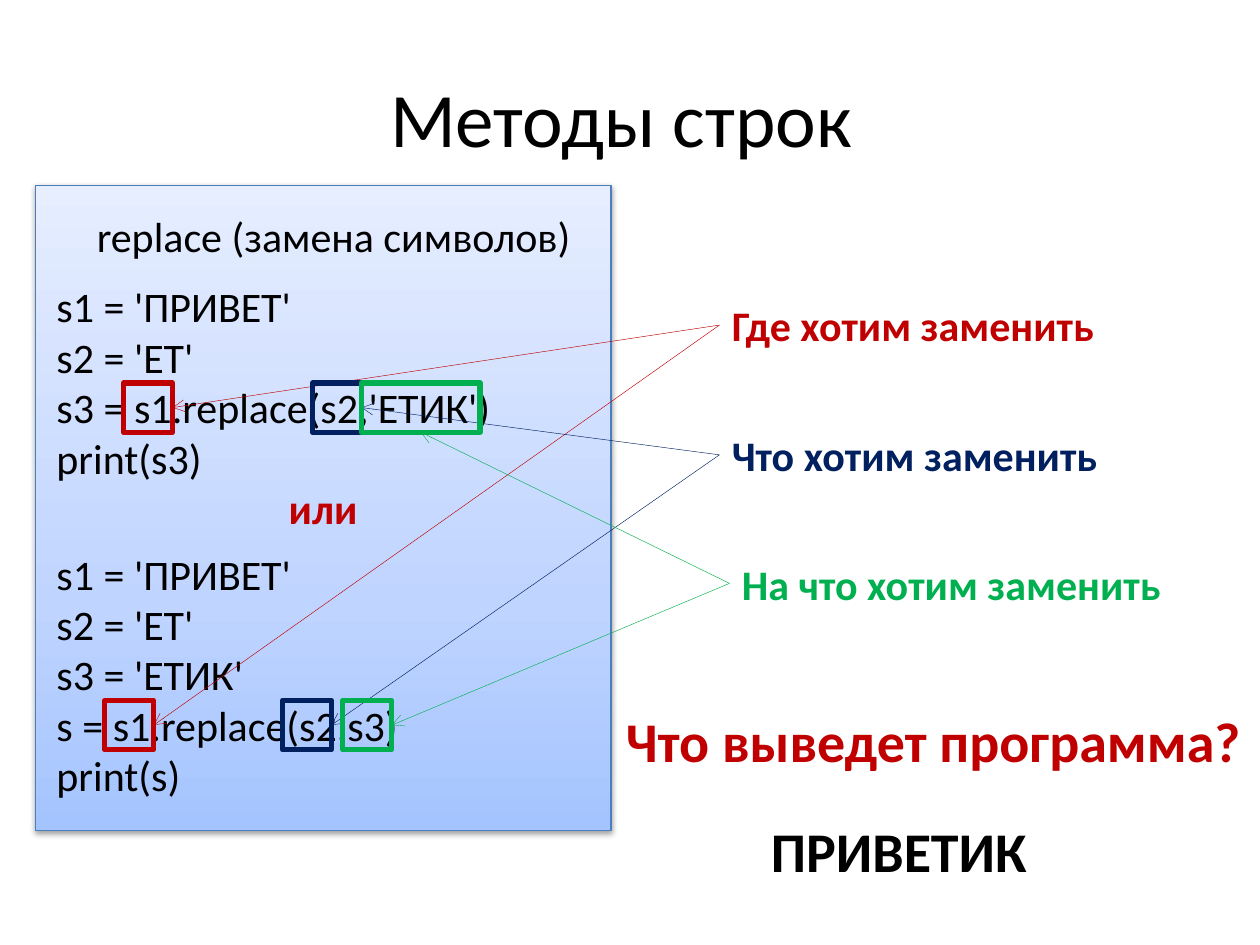
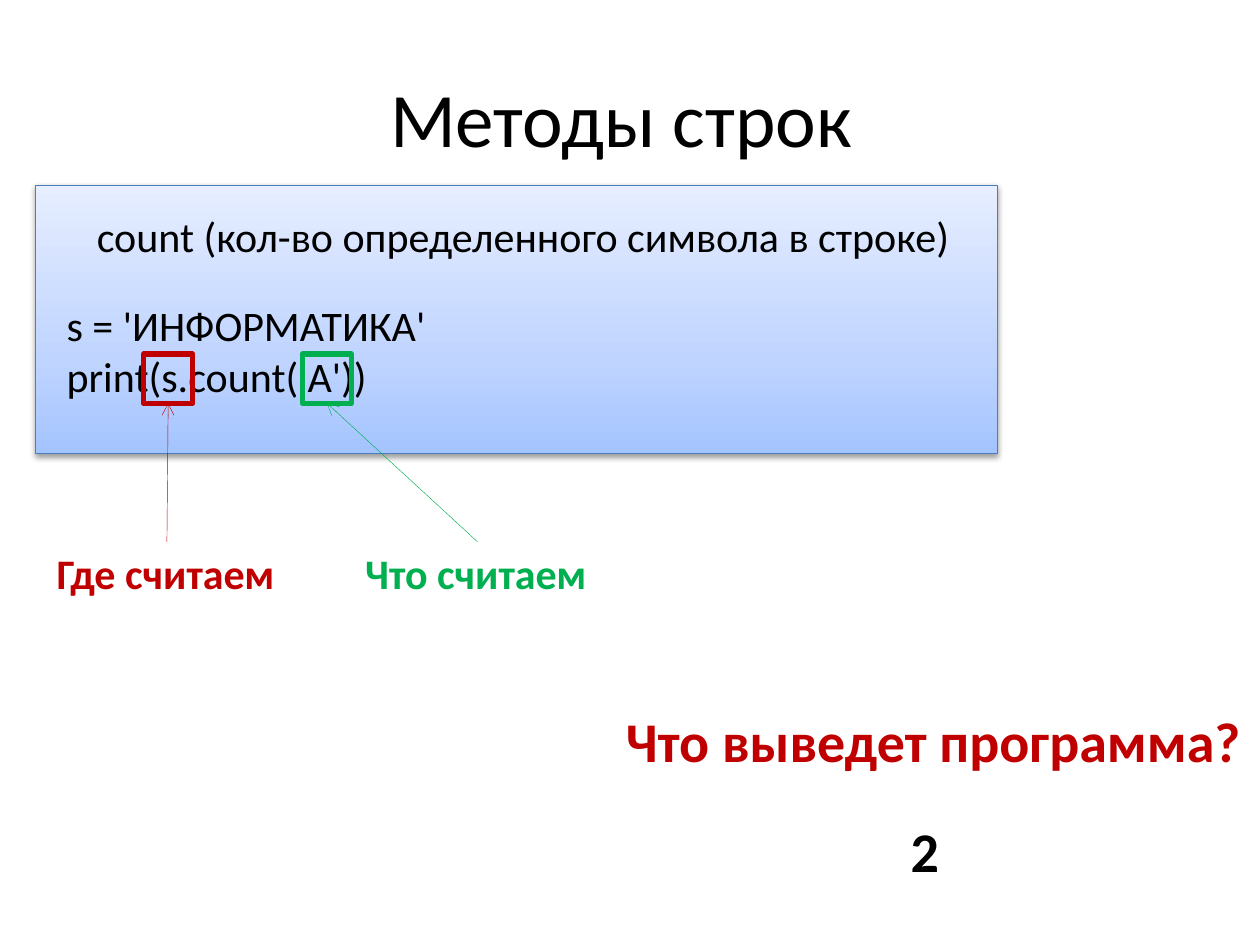
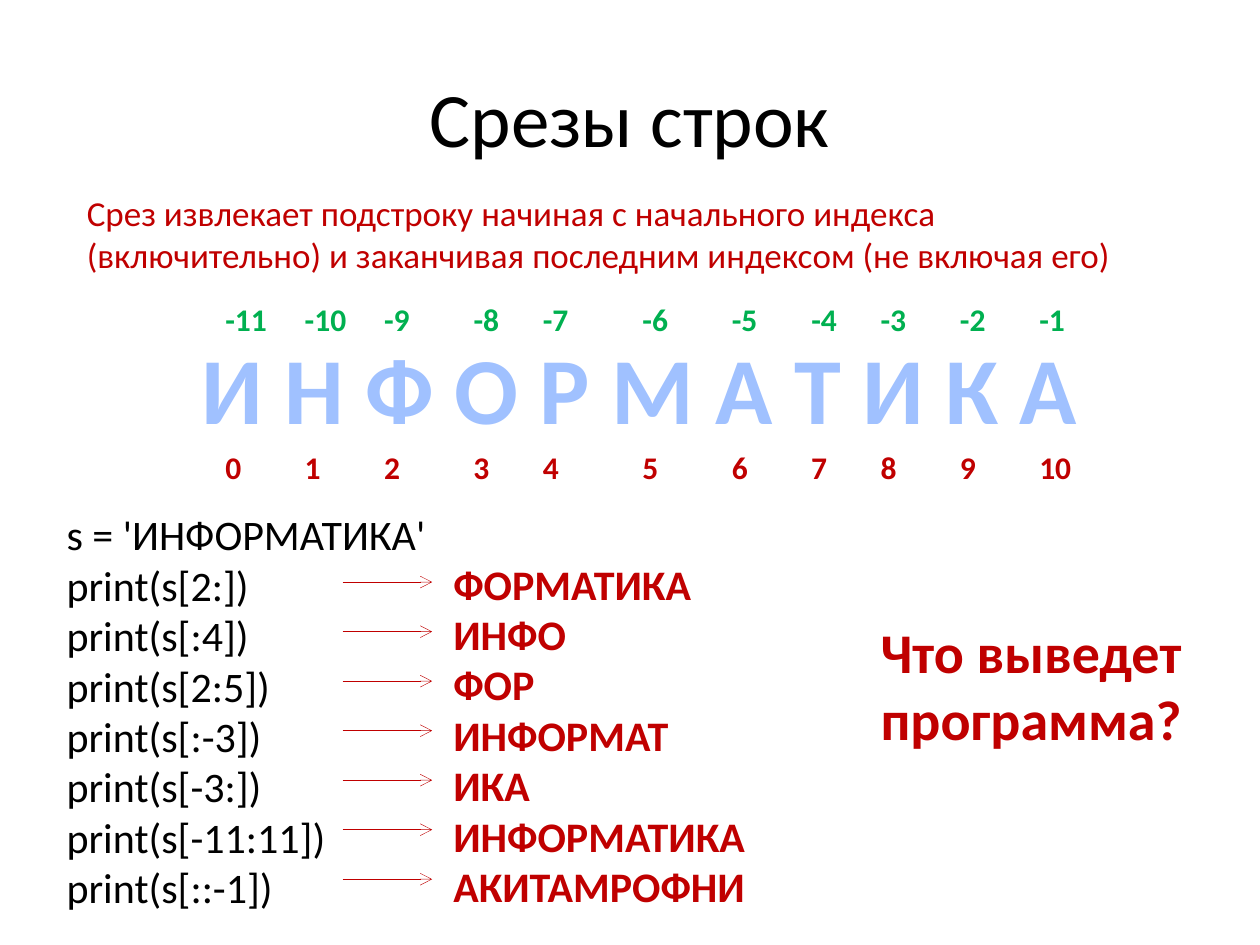
import copy

import pptx
import pptx.dml.color
import pptx.enum.shapes
import pptx.enum.text
import pptx.oxml
import pptx.oxml.ns
import pptx.util

Inches = pptx.util.Inches

# Shared look
FONT = "Calibri"
BLACK, RED, NAVY, GREEN, PALE = "000000", "C00000", "002060", "00B050", "A0C1FF"
EDGE = "4B7EBC"
BLEND = [(0, "A4C4FF"), (0.35, "BFD4FF"), (1, "E6EEFF")]
TITLE_AT = (0.5, 0.3, 9, 1.25)
HEAD, CODE, ASK = 44, 24, 32
BOX = 0.39
TOP, LEFT, BOTTOM, RIGHT = range(4)  # connection sites of a rectangle
NS = 'xmlns:a="http://schemas.openxmlformats.org/drawingml/2006/main"'
SHADOW = (f'<a:effectLst {NS}><a:outerShdw blurRad="40000" dist="20000" dir="5400000" '
          'rotWithShape="0"><a:srgbClr val="000000"><a:alpha val="38000"/></a:srgbClr>'
          '</a:outerShdw></a:effectLst>')

# Slides on string methods; marks are (left, top, width, arrow site)
METHODS = [
    {
        "panel": (0.28, 1.47, 4.57, 5.12), "middle": "или",
        "head": ("replace (замена символов)", 4),
        "code": [
            ((0.35, 2.18, 5, 1.72),
             ["s1 = 'ПРИВЕТ'", "s2 = 'ЕТ'", "s3 = s1.replace(s2,'ЕТИК')", "print(s3)"]),
            ((0.35, 4.3, 5, 2.12),
             ["s1 = 'ПРИВЕТ'", "s2 = 'ЕТ'", "s3 = 'ЕТИК'", "s = s1.replace(s2,s3)",
              "print(s)"]),
        ],
        "from": LEFT,
        "calls": [
            ("Где хотим заменить", (5.71, 2.33, 3.1, 0.5), RED,
             [(0.83, 5.56, BOX, RIGHT), (0.98, 3.04, BOX, RIGHT)]),
            ("Что хотим заменить", (5.71, 3.36, 3.13, 0.5), NAVY,
             [(2.48, 3.04, BOX, RIGHT), (2.24, 5.56, BOX, RIGHT)]),
            ("На что хотим заменить", (5.79, 4.38, 3.56, 0.5), GREEN,
             [(2.72, 5.56, BOX, RIGHT), (2.87, 3.04, 0.94, BOTTOM)]),
        ],
        "answer": ("ПРИВЕТИК", (6.02, 6.43, 2.25, 0.64)),
    },
    {
        "panel": (0.28, 1.47, 7.64, 2.13), "middle": "",
        "head": ("count (кол-во определенного символа в строке)", 7.03),
        "code": [((0.43, 2.33, 5, 0.91), ["s = 'ИНФОРМАТИКА'", "print(s.count('А'))"])],
        "from": TOP,
        "calls": [
            ("Где считаем", (0.35, 4.3, 1.95, 0.5), RED, [(1.14, 2.81, BOX, BOTTOM)]),
            ("Что считаем", (2.8, 4.3, 1.98, 0.5), GREEN, [(2.4, 2.81, BOX, BOTTOM)]),
        ],
        "answer": ("2", (7.13, 6.43, 0.43, 0.64)),
    },
]

# Slide on slices
RULE = ("Срез извлекает подстроку начиная с начального индекса (включительно) "
        "и заканчивая последним индексом (не включая его)")
WORD = "ИНФОРМАТИКА"
COLS = [1.69, 2.32, 2.95, 3.66, 4.21, 5, 5.71, 6.34, 6.89, 7.52, 8.15]
SLICES = [
    ("2:", "ФОРМАТИКА"), (":4", "ИНФО"), ("2:5", "ФОР"), (":-3", "ИНФОРМАТ"),
    ("-3:", "ИКА"), ("-11:11", "ИНФОРМАТИКА"), ("::-1", "АКИТАМРОФНИ"),
]


def rgb(hue):
    return pptx.dml.color.RGBColor.from_string(hue)


def span(at):
    return [Inches(n) for n in at]


def write(frame, lines, size, hue=BLACK, bold=False, center=False):
    for i, line in enumerate(lines):
        para = frame.paragraphs[0] if i == 0 else frame.add_paragraph()
        if center:
            para.alignment = pptx.enum.text.PP_ALIGN.CENTER
        run = para.add_run()
        run.text = line
        font = run.font
        font.name, font.size, font.bold = FONT, pptx.util.Pt(size), bold
        font.color.rgb = rgb(hue)


def label(slide, at, lines, size=CODE, hue=BLACK, bold=False, wrap=False, center=False):
    box = slide.shapes.add_textbox(*span(at))
    box.text_frame.word_wrap = wrap
    box.text_frame.auto_size = pptx.enum.text.MSO_AUTO_SIZE.SHAPE_TO_FIT_TEXT
    write(box.text_frame, lines, size, hue, bold, center)
    return box


def rect(slide, at, hue, width):
    box = slide.shapes.add_shape(pptx.enum.shapes.MSO_SHAPE.RECTANGLE, *span(at))
    box.shadow.inherit = False
    box.fill.background()
    box.line.color.rgb = rgb(hue)
    box.line.width = pptx.util.Pt(width)
    return box


def panel(slide, at, middle):
    box = rect(slide, at, EDGE, 0.75)
    box.fill.gradient()
    box.fill.gradient_angle = 90
    props = box._element.spPr
    stops = props.find(".//" + pptx.oxml.ns.qn("a:gsLst"))
    stops.append(copy.deepcopy(stops[-1]))
    for stop, (place, hue) in zip(box.fill.gradient_stops, BLEND):
        stop.position = place
        stop.color.rgb = rgb(hue)
    plain = props.find(pptx.oxml.ns.qn("a:effectLst"))
    props.replace(plain, pptx.oxml.parse_xml(SHADOW))
    if middle:
        write(box.text_frame, [middle], CODE, RED, True, True)


def arrow(slide, hue, start=(0, 0), end=(0, 0)):
    line = slide.shapes.add_connector(
        pptx.enum.shapes.MSO_CONNECTOR.STRAIGHT, *span(start + end))
    line.line.color.rgb = rgb(hue)
    line.line.width = pptx.util.Pt(0.25)
    tip = pptx.oxml.parse_xml(f'<a:tailEnd {NS} type="arrow"/>')
    line.line._get_or_add_ln().append(tip)
    line._element.spPr.append(pptx.oxml.parse_xml(f"<a:effectLst {NS}/>"))
    return line


def start(deck, title):
    slide = deck.slides.add_slide(deck.slide_layouts[5])
    head = slide.shapes.title
    head.left, head.top, head.width, head.height = span(TITLE_AT)
    head.text_frame.vertical_anchor = pptx.enum.text.MSO_ANCHOR.MIDDLE
    write(head.text_frame, [title], HEAD, center=True)
    return slide


def method(deck, data):
    slide = start(deck, "Методы строк ")
    panel(slide, data["panel"], data["middle"])
    name, width = data["head"]
    label(slide, (0.67, 1.62, width, 0.5), [name])
    for at, lines in data["code"]:
        label(slide, at, lines, wrap=True)

    # Labels joined to the framed parts of the code
    for text, at, hue, marks in data["calls"]:
        note = label(slide, at, [text], hue=hue, bold=True)
        for left, top, wide, site in marks:
            mark = rect(slide, (left, top, wide, BOX), hue, 3)
            line = arrow(slide, hue)
            line.begin_connect(note, data["from"])
            line.end_connect(mark, site)

    label(slide, (4.87, 5.56, 5.13, 0.64), ["Что выведет программа?"], ASK, RED, True)
    text, at = data["answer"]
    label(slide, at, [text], ASK, bold=True)


def slices(deck):
    slide = start(deck, "Срезы строк")
    label(slide, (0.59, 1.47, 8.82, 0.77), [RULE], 20, RED, wrap=True)

    # Spaced word with indexes below and above
    label(slide, (1.46, 2.57, 7.23, 1.01), [" ".join(WORD)], 54, PALE, True, center=True)
    for top, first, hue in [(3.51, 0, RED), (2.33, -len(WORD), GREEN)]:
        for num, left in enumerate(COLS, first):
            wide = 0.2 + 0.13 * len(str(abs(num))) + 0.08 * (num < 0)
            label(slide, (left, top, wide, 0.4), [str(num)], 18, hue, True)

    # Code, arrows and results
    code = [f"s = '{WORD}'"] + [f"print(s[{cut}])" for cut, _ in SLICES]
    label(slide, (0.43, 3.99, 5, 3.33), code, wrap=True)
    label(slide, (6.89, 4.85, 2.72, 1.18), ["Что выведет", "программа?"], ASK, RED, True)
    label(slide, (3.5, 4.38, 5, 2.93), [out for _, out in SLICES], CODE, RED, True, True)
    for row in range(len(SLICES)):
        y = 4.62 + 0.393 * row
        arrow(slide, RED, (2.72, y), (3.43, y))


def main():
    deck = pptx.Presentation()
    deck.slide_width, deck.slide_height = Inches(10), Inches(7.5)
    for data in METHODS:
        method(deck, data)
    slices(deck)
    deck.save("out.pptx")


if __name__ == "__main__":
    main()
